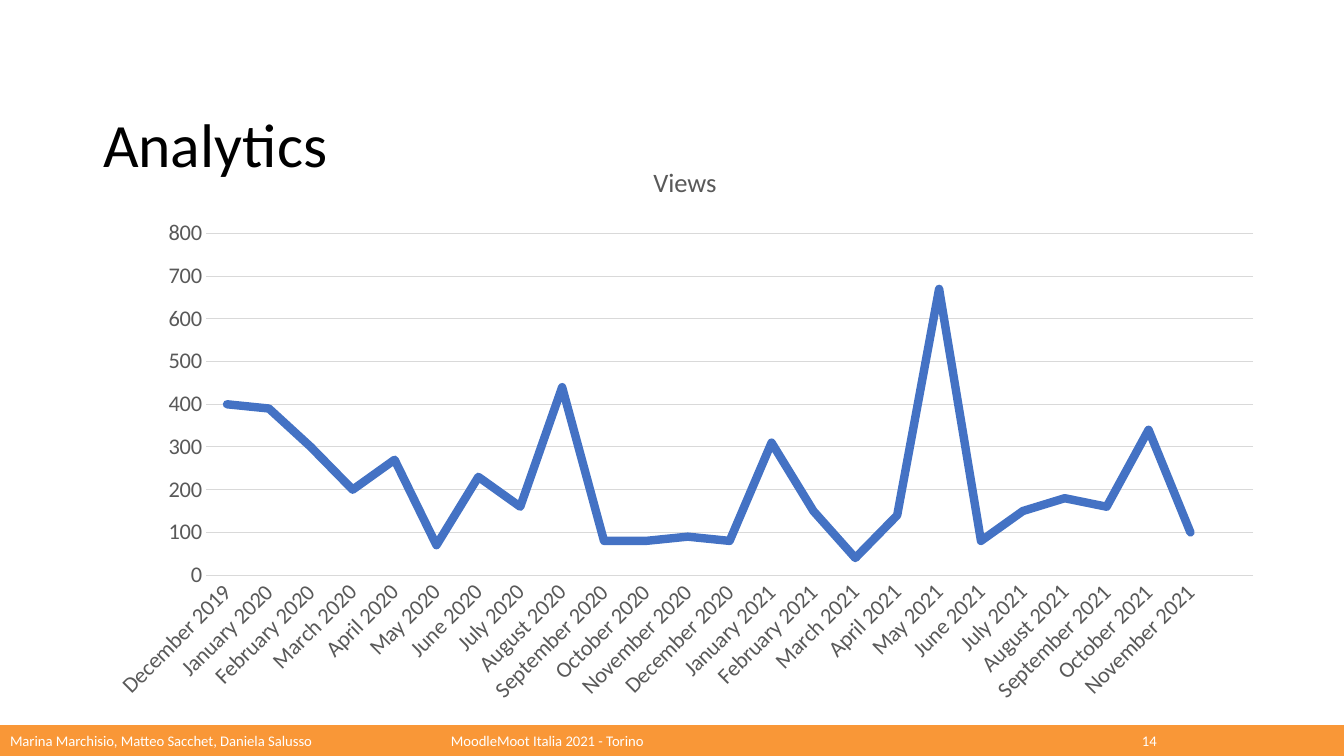
from pptx import Presentation
from pptx.chart.data import CategoryChartData
from pptx.dml.color import RGBColor
from pptx.enum.chart import XL_CHART_TYPE as ChartType, XL_MARKER_STYLE as Marker, XL_TICK_MARK as Tick
from pptx.enum.shapes import MSO_SHAPE as Shape
from pptx.enum.text import MSO_ANCHOR as Anchor, PP_ALIGN as Align
from pptx.util import Pt

PX = 914400 / 100.8
FONT = "Calibri"
COLORS = {"bar": "F99737", "white": "FFFFFF", "title": "000000",
          "label": "595959", "grid": "D9D9D9", "views": "4472C4"}
MONTHS = ["January", "February", "March", "April", "May", "June", "July",
          "August", "September", "October", "November", "December"]
VIEWS = [400, 390, 300, 200, 270, 70, 230, 160, 440, 80, 80, 90, 80,
         310, 150, 40, 140, 670, 80, 150, 180, 160, 340, 100, None]


def px(*lengths):
    """Turn pixel lengths into EMU."""
    return [round(length * PX) for length in lengths]


def color(key):
    """Look up a colour of the slide."""
    return RGBColor.from_string(COLORS[key])


def style_font(font, size, key):
    """Set typeface, size and colour of a font."""
    font.name, font.size, font.bold = FONT, Pt(size), False
    font.color.rgb = color(key)


def style_line(line, key, width):
    """Set colour and width of a line."""
    line.color.rgb = color(key)
    line.width = Pt(width)


def add_title(slide, box):
    """Place the slide title in the box."""
    title = slide.shapes.title
    title.left, title.top, title.width, title.height = px(*box)
    frame = title.text_frame
    frame.text = "Analytics"
    frame.vertical_anchor = Anchor.MIDDLE
    heading = frame.paragraphs[0]
    heading.alignment = Align.LEFT
    heading.line_spacing = 0.9
    style_font(heading.runs[0].font, 44, "title")


def add_views_chart(slide, box):
    """Plot the monthly views in the box."""
    data = CategoryChartData()
    data.categories = ["December 2019"] + [
        f"{month} {year}" for year in (2020, 2021) for month in MONTHS][:23] + [""]
    data.add_series("Views", VIEWS)
    chart = slide.shapes.add_chart(ChartType.LINE, *px(*box), data).chart
    chart.has_legend = False
    style_font(chart.font, 16, "label")
    chart.has_title = True
    chart.chart_title.include_in_layout = False
    heading = chart.chart_title.text_frame
    heading.text = "Views"
    style_font(heading.paragraphs[0].runs[0].font, 19, "label")

    months, counts = chart.category_axis, chart.value_axis
    for axis in (months, counts):
        axis.major_tick_mark = axis.minor_tick_mark = Tick.NONE
        style_font(axis.tick_labels.font, 16, "label")
    style_line(months.format.line, "grid", 0.75)
    counts.minimum_scale, counts.maximum_scale, counts.major_unit = 0, 800, 100
    counts.format.line.fill.background()
    style_line(counts.major_gridlines.format.line, "grid", 0.75)

    plot = chart.plots[0]
    plot.vary_by_categories = False
    views = plot.series[0]
    views.smooth = False
    views.marker.style = Marker.NONE
    style_line(views.format.line, "views", 6)
    chart.element.xpath(".//c:ser/c:spPr/a:ln")[0].set("cap", "rnd")
    chart.element.xpath(".//c:catAx/c:txPr/a:bodyPr")[0].set("rot", "-2700000")


def add_footer(slide, box):
    """Draw the footer bar with authors, event and slide number."""
    left, top, width, height = box
    bar = slide.shapes.add_shape(Shape.RECTANGLE, *px(*box))
    bar.shadow.inherit = False
    bar.fill.solid()
    bar.fill.fore_color.rgb = color("bar")
    bar.line.fill.background()
    for text, offset, span in (
            ("Marina Marchisio, Matteo Sacchet, Daniela Salusso", 10, 400),
            ("MoodleMoot Italia 2021 - Torino", 451, 300),
            ("14", 1142, 60)):
        frame = slide.shapes.add_textbox(*px(left + offset, top, span, height)).text_frame
        frame.margin_left = frame.margin_right = frame.margin_top = frame.margin_bottom = 0
        frame.word_wrap = True
        frame.vertical_anchor = Anchor.MIDDLE
        frame.text = text
        style_font(frame.paragraphs[0].runs[0].font, 10.5, "white")


def main():
    """Build the analytics slide."""
    deck = Presentation()
    deck.slide_width, deck.slide_height = px(1344, 756)
    slide = deck.slides.add_slide(deck.slide_layouts[5])
    add_footer(slide, (0, 725, 1344, 31))
    add_title(slide, (93, 75, 1159, 146))
    add_views_chart(slide, (93, 143, 1184, 572))
    deck.save("out.pptx")


if __name__ == "__main__":
    main()
